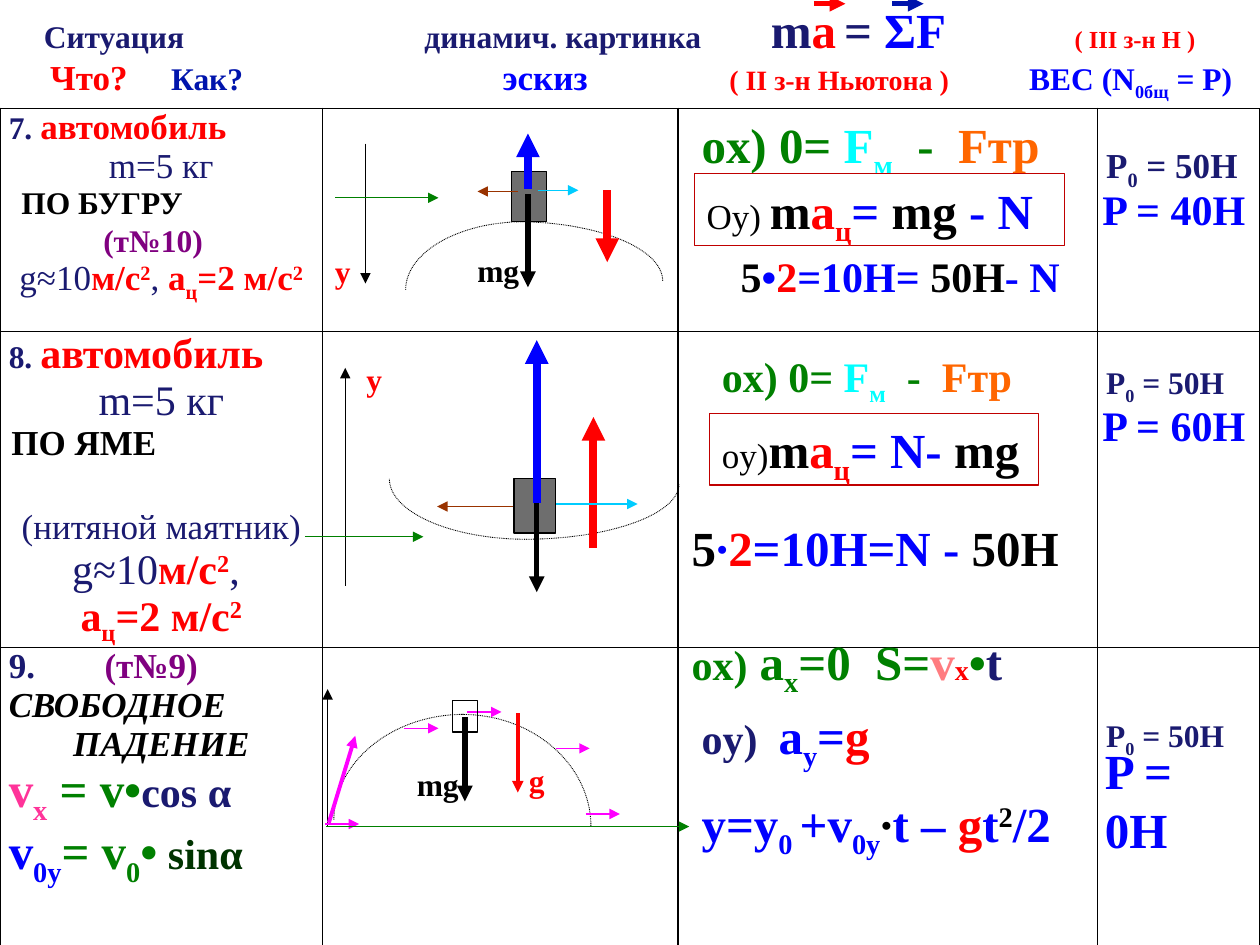
"""Build a one-slide physics table: motion over a bump, through a dip and in free fall."""
import pptx
import pptx.util
import pptx.dml.color
import pptx.enum.dml
import pptx.enum.shapes
import pptx.enum.text
import pptx.oxml
import pptx.oxml.ns

FONT = "Times New Roman"
SIZE = 10, 7.5
GRID = 1000, 750
HUES = {"navy": "1A1A70", "red": "FF0000", "black": "000000", "plum": "800080",
        "green": "008000", "blue": "0000FF", "cyan": "00FFFF", "flame": "FF6600",
        "pink": "FF3399", "rose": "FF7C80", "moss": "003300", "deep": "0014AC",
        "sky": "00CCFF", "brown": "993300", "pure": "FF00FF", "grey": "6E6E6E",
        "white": "FFFFFF", "brick": "C00000"}

MASS = [("m=5 кг", "navy", "n")]
UNIT = [("g≈10", "navy", "n"), ("м/с", "red"), ("2", "red", "^"), (", ", "navy", "n")]
PULL = [("а", "red"), ("ц", "red", "_"), ("=2 м/с", "red"), ("2", "red", "^")]
REST = [("P", "navy"), ("0", "navy", "_"), (" = 50H", "navy")]
MID = {"align": "c"}

COLS = 256, 282, 333, 129
ROWS = 177, 251, 242
CASES = [
    [(20, [("7. ", "navy", "", 18), ("автомобиль", "red")], {}),
     (20, MASS, MID),
     (18, [("ПО БУГРУ", "black")], {"indent": 10}),
     (18, [("(т№10)", "plum")], {"align": "c", "right": 13, "before": 2}),
     (20, UNIT + PULL, MID)],
    [(24, [("8. ", "navy", "", 18), ("автомобиль", "red")], {}),
     (24, MASS, MID),
     (20, [("ПО ЯМЕ", "black")], {"indent": 2}),
     (20, [("(нитяной маятник)", "navy", "n")], {"align": "c", "before": 26}),
     (24, UNIT, MID),
     (24, PULL, MID)],
    [(20, [("9.\t", "navy"), ("(т№9)", "plum")], {"tabs": [76]}),
     (20, [("СВОБОДНОЕ", "black", "i")], {}),
     (20, [("ПАДЕНИЕ", "black", "i")], MID),
     (28, [("v", "pink"), ("x", "pink", "_"), (" = v•", "green"),
           ("cos α", "navy", "", 24)], {}),
     (28, [("v", "blue"), ("0y", "blue", "_"), ("= v", "green"), ("0", "green", "_"),
           ("•", "green"), (" sinα", "moss", "", 24)], {})]]
LOADS = [(20, 31), (18, 28), (18, 57)]

SKETCH = [
    [("ray", 274, 465, 274, 292, "black", 0.75), ("arc", 418, 428, 309, 380),
     ("arc", 416, 428, 539, 384), ("ray", 471, 435, 471, 331, "red", 4.5),
     ("ray", 432, 400, 506, 400, "sky", 0.75), ("ray", 421, 402, 347, 402, "brown", 0.75),
     ("box", 408, 380, 33, 43, "grey"), ("ray", 426, 399, 426, 270, "blue", 4.5),
     ("ray", 426, 399, 426, 470, "black", 3), ("ray", 242, 426, 336, 426, "green", 0.75)],
    [("box", 406, 136, 28, 40, "grey"), ("arc", 416, 176, 322, 230),
     ("arc", 410, 176, 526, 223), ("ray", 290, 114, 290, 225, "black", 0.75),
     ("ray", 266, 157, 348, 157, "green", 0.75), ("ray", 482, 151, 482, 208, "red", 4.5),
     ("ray", 419, 154, 419, 228, "black", 3), ("ray", 419, 150, 419, 106, "blue", 4.5),
     ("ray", 427, 151, 459, 151, "sky", 0.75), ("ray", 411, 152, 379, 152, "brown", 0.75)],
    [("arc", 368, 567, 265, 651), ("arc", 367, 567, 469, 656),
     ("ray", 260, 656, 260, 547, "black", 0.75), ("ray", 261, 653, 282, 584, "pure", 2.25),
     ("ray", 411, 566, 411, 629, "red", 2.25)]
    + [("ray", x, y, x + 27, y, "pure", 0.75)
       for x, y in [(258, 654), (371, 565), (465, 646), (441, 594), (321, 578)]]
    + [("ray", 369, 569, 369, 636, "black", 3), ("box", 359, 556, 20, 25, None),
       ("ray", 259, 656, 547, 656, "green", 0.75)]]
MARKS = [("ray", 646, 3, 671, 3, "red", 3), ("ray", 708, 3, 733, 3, "deep", 3)]

HEAD = [
    (18, [("\tСитуация", "navy"), ("\tдинамич. картинка", "navy"), ("\tm", "navy", "", 28),
          ("a", "red", "", 28), (" ", "navy"), ("=", "navy", "", 28), (" ΣF", "blue", "", 28),
          ("\t( III з-н Н )", "red", "", 14)], {"tabs": [25, 327, 602, 843], "line": 25}),
    (18, [("\tЧто?", "red", "", 20), ("\tКак?", "deep"), ("\tэскиз", "blue", "", 20),
          ("\t( II з-н Ньютона )", "red", "", 16), ("\tВЕС (N", "blue"),
          ("0бщ", "blue", "_"), (" = P)", "blue")],
     {"tabs": [30, 126, 389, 569, 807], "line": 25})]
DRIVE = [("ox) 0= ", "green"), ("F", "cyan"), ("м", "cyan", "_"), ("  -  ", "green"),
         ("Fтр", "flame")]
FORCE = [("m", "black"), ("a", "red"), ("ц", "red", "_")]
NOTES = [
    (563, 273, 255, 50, 24, DRIVE),
    (547, 86, 294, 57, 28, DRIVE),
    (256, 195, 33, 40, 18, [("y", "red")]),
    (551, 138, 294, 57, 28, [("Oy) ", "black", "n", 20)] + FORCE
     + [("= ", "blue"), ("mg", "black"), (" - N", "blue")], "brick"),
    (578, 194, 276, 50, 24, [("5", "black"), ("•", "blue"), ("2", "red"), ("=10H= ", "blue"),
                             ("50H", "black"), ("- N", "blue")]),
    (865, 141, 135, 50, 24, [("P = 40H", "blue")]),
    (281, 281, 33, 40, 18, [("y", "red")]),
    (563, 328, 261, 57, 28, [("oy)", "black", "n", 20)] + FORCE
     + [("= N- ", "blue"), ("mg", "black")], "brick"),
    (539, 406, 325, 57, 28, [("5", "black"), ("∙", "blue"), ("2", "red"),
                             ("=10H=N - ", "blue"), ("50H", "black")]),
    (865, 312, 135, 50, 24, [("P = 60H", "blue")]),
    (321, 602, 54, 40, 18, [("mg", "black")]),
    (410, 599, 33, 40, 18, [("g", "red")]),
    (539, 496, 280, 57, 28, [("ox)", "green", "", 24), (" а", "green"), ("x", "green", "_"),
                             ("=0  S=", "green"), ("v", "rose"), ("x", "red", "", 16),
                             ("•", "green"), ("t", "navy")]),
    (547, 555, 167, 57, 28, [("oy)  ", "navy", "", 24), ("а", "blue"), ("y", "blue", "_"),
                             ("=", "blue"), ("g", "red")]),
    (547, 625, 309, 57, 28, [("y=y", "blue"), ("0 ", "blue", "_"), ("+v", "blue"),
                             ("0y", "blue", "_"), ("∙", "black"), ("t – ", "blue"),
                             ("g", "red"), ("t", "blue"), ("2", "black", "^"), ("/2", "blue")]),
    (369, 194, 54, 40, 18, [("mg", "black")])]
FALL = 867, 583, 129, 103, 28, [("P = 0H", "blue")]

deck = pptx.Presentation()
deck.slide_width, deck.slide_height = (pptx.util.Inches(n) for n in SIZE)
slide = deck.slides.add_slide(deck.slide_layouts[6])
UNITS = deck.slide_width // GRID[0], deck.slide_height // GRID[1]


def place(*nums):
    return [round(n * UNITS[i % 2]) for i, n in enumerate(nums)]


def tint(name):
    return pptx.dml.color.RGBColor.from_string(HUES[name])


def node(tag, body="", **attrs):
    bits = "".join(f' {k}="{v}"' for k, v in attrs.items())
    return pptx.oxml.parse_xml(f'<a:{tag} {pptx.oxml.ns.nsdecls("a")}{bits}>{body}</a:{tag}>')


def add(para, size, text, hue, style="", own=None):
    run = para.add_run()
    run.text, font = text, run.font
    font.name, font.size = FONT, pptx.util.Pt(own or size)
    font.bold, font.italic = "n" not in style, "i" in style
    font.color.rgb = tint(hue)
    for mark, base in (("^", "30000"), ("_", "-25000")):
        if mark in style:
            run._r.get_or_add_rPr().set("baseline", base)


def write(frame, paras):
    for i, (size, runs, form) in enumerate(paras):
        para = frame.add_paragraph() if i else frame.paragraphs[0]
        kinds = pptx.enum.text.PP_ALIGN
        para.alignment = kinds.CENTER if form.get("align") == "c" else kinds.LEFT
        if "line" in form:
            para.line_spacing = pptx.util.Pt(form["line"])
        if "before" in form:
            para.space_before = pptx.util.Pt(form["before"])
        props = para._p.get_or_add_pPr()
        for key, name in (("indent", "marL"), ("right", "marR")):
            props.set(name, str(place(form.get(key, 0))[0]))
        if "tabs" in form:
            stops = "".join(f'<a:tab pos="{place(t)[0]}" algn="l"/>' for t in form["tabs"])
            props.append(node("tabLst", stops))
        for run in runs:
            add(para, size, *run)


def label(x, y, w, h, size, runs, edge=None, wrap=False):
    box = slide.shapes.add_textbox(*place(x, y, w, h))
    if edge:
        box.fill.solid()
        box.fill.fore_color.rgb = tint("white")
        box.line.color.rgb, box.line.width = tint(edge), pptx.util.Pt(0.75)
    frame = box.text_frame
    frame.word_wrap = wrap
    frame.auto_size = pptx.enum.text.MSO_AUTO_SIZE.SHAPE_TO_FIT_TEXT
    write(frame, runs if size is None else [(size, runs, {})])
    return frame


def ray(home, x1, y1, x2, y2, hue, width):
    line = home.add_connector(pptx.enum.shapes.MSO_CONNECTOR.STRAIGHT, *place(x1, y1, x2, y2))
    line.line.color.rgb, line.line.width = tint(hue), pptx.util.Pt(width)
    line.line._get_or_add_ln().append(node("tailEnd", type="triangle"))
    line._element.spPr.append(node("effectLst"))


def arc(home, ax, ay, fx, fy, bend=0.55):
    pen = home.build_freeform(*place(ax, ay))
    pulls = (ax + (fx - ax) * bend, ay), (fx, fy + (ay - fy) * bend), (fx, fy)
    pen.add_line_segments([place(*p) for p in pulls], close=False)
    curve = pen.convert_to_shape()
    legs = curve._element.xpath(".//a:lnTo")
    bezier = node("cubicBezTo")
    legs[0].addprevious(bezier)
    for leg in legs:
        bezier.append(leg[0])
        leg.getparent().remove(leg)
    curve.shadow.inherit = False
    curve.fill.background()
    curve.line.color.rgb, curve.line.width = tint("black"), pptx.util.Pt(0.5)
    curve.line.dash_style = pptx.enum.dml.MSO_LINE.ROUND_DOT


def box(home, x, y, w, h, hue):
    body = home.add_shape(pptx.enum.shapes.MSO_SHAPE.RECTANGLE, *place(x, y, w, h))
    body.shadow.inherit = False
    body.line.color.rgb, body.line.width = tint("black"), pptx.util.Pt(0.75)
    if hue:
        body.fill.solid()
        body.fill.fore_color.rgb = tint(hue)
    else:
        body.fill.background()


def draw(home, parts):
    for kind, *args in parts:
        {"ray": ray, "arc": arc, "box": box}[kind](home, *args)


table = slide.shapes.add_table(len(ROWS), len(COLS), *place(0, 86, sum(COLS), sum(ROWS))).table
table.first_row = table.horz_banding = False
for col, wide in zip(table.columns, COLS):
    col.width = place(wide)[0]
for row, tall in zip(table.rows, ROWS):
    row.height = place(tall)[0]
ink = f'<a:solidFill><a:srgbClr val="{HUES["black"]}"/></a:solidFill>'
for cell in table.iter_cells():
    cell.margin_left = cell.margin_right = place(7)[0]
    cell.margin_top = cell.margin_bottom = 0
    for side in "LRTB":
        cell._tc.get_or_add_tcPr().append(node("ln" + side, ink, w=pptx.util.Pt(1)))
    cell.fill.background()
for i, (case, (size, top)) in enumerate(zip(CASES, LOADS)):
    write(table.cell(i, 0).text_frame, case)
    load = table.cell(i, 3)
    load.margin_top = place(top)[0]
    write(load.text_frame, [(size, REST, {})])

for parts in SKETCH:
    draw(slide.shapes.add_group_shape().shapes, parts)
draw(slide.shapes, MARKS)
label(0, 6, 1000, 80, None, HEAD, wrap=True).vertical_anchor = pptx.enum.text.MSO_ANCHOR.MIDDLE
for note in NOTES:
    label(*note)
label(*FALL, wrap=True)
deck.save("out.pptx")
